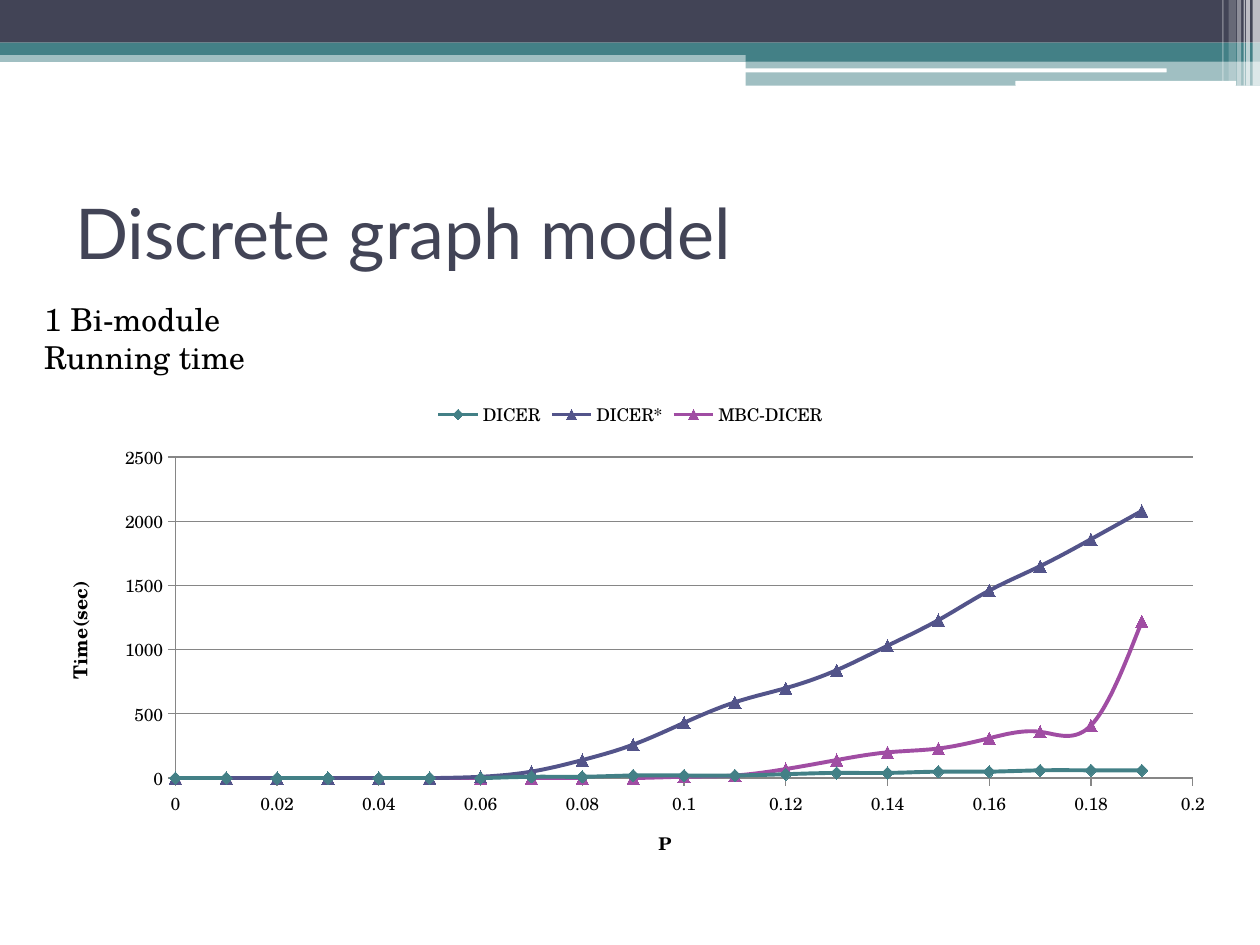
from pptx import Presentation
from pptx.chart.data import XyChartData
from pptx.dml.color import RGBColor
from pptx.enum import chart as charts, shapes, text
from pptx.oxml import parse_xml
from pptx.oxml.ns import nsdecls, qn
from pptx.util import Cm, Pt

COLORS = {"navy": "424456", "teal": "438086", "indigo": "53548A",
          "purple": "A04DA3", "white": "FFFFFF", "black": "000000", "grid": "868686"}
SERIF = "TeX Gyre Schola"

# left, top, width, height in cm, colour, opacity in percent
BANDS = [
    (0, 1.02, 25.4, 0.23, "teal", 50),
    (0, 0, 25.4, 0.86, "navy", 100),
    (0, 0.86, 25.4, 0.25, "teal", 100),
    (15.03, 0.99, 10.37, 0.25, "teal", 100),
    (15.03, 1.23, 10.37, 0.5, "teal", 50),
]
RULES = [(15.01, 1.38, 8.51, 0.08), (20.47, 1.63, 4.45, 0.1)]
# left, width, height in cm, opacity in percent
STRIPES = [
    (25.25, 0.15, 1.73, 65), (25.12, 0.08, 1.73, 65), (25.07, 0.03, 1.73, 60),
    (24.94, 0.08, 1.73, 40), (24.77, 0.15, 1.63, 20), (24.64, 0.03, 1.63, 30),
]

MARKERS = charts.XL_MARKER_STYLE
SERIES = [
    ("DICER", "teal", MARKERS.DIAMOND,
     [0, 0, 0, 0, 0, 0, 0, 10, 10, 20, 20, 20, 30, 40, 40, 50, 50, 60, 60, 60]),
    ("DICER*", "indigo", MARKERS.TRIANGLE,
     [0, 0, 0, 0, 0, 0, 10, 50, 140, 260, 430, 590, 700, 840, 1030, 1230,
      1460, 1650, 1860, 2080]),
    ("MBC-DICER", "purple", MARKERS.TRIANGLE,
     [0, 0, 0, 0, 0, 0, 0, 0, 0, 0, 10, 20, 70, 140, 200, 230, 310, 360, 410, 1220]),
]


def rgb(name):
    return RGBColor.from_string(COLORS[name])


def add_band(page, left, top, width, height, color, opacity=100,
             kind=shapes.MSO_SHAPE.RECTANGLE):
    band = page.shapes.add_shape(kind, Cm(left), Cm(top), Cm(width), Cm(height))
    band.shadow.inherit = False
    band.fill.solid()
    band.fill.fore_color.rgb = rgb(color)
    band.line.fill.background()
    if opacity < 100:
        tint = next(band.element.iter(qn("a:srgbClr")))
        tint.append(parse_xml(f'<a:alpha {nsdecls("a")} val="{opacity * 1000}"/>'))


def add_header(page):
    for band in BANDS:
        add_band(page, *band)
    for rule in RULES:
        add_band(page, *rule, "white", kind=shapes.MSO_SHAPE.ROUNDED_RECTANGLE)
    for left, width, height, opacity in STRIPES:
        add_band(page, left, 0, width, height, "white", opacity)


def style_font(font, size, color="black", name=SERIF, bold=False):
    font.size = Pt(size)
    font.name = name
    font.bold = bold
    font.color.rgb = rgb(color)


def add_text(page, place, lines, size, color, font, anchor):
    box = page.shapes.add_textbox(*map(Cm, place))
    frame = box.text_frame
    frame.word_wrap = True
    frame.vertical_anchor = anchor
    for index, line in enumerate(lines):
        para = frame.add_paragraph() if index else frame.paragraphs[0]
        para.alignment = text.PP_ALIGN.LEFT
        span = para.add_run()
        span.text = line
        style_font(span.font, size, color, font)


def style_axis(axis, title, title_size, maximum, step):
    axis.minimum_scale = 0
    axis.maximum_scale = maximum
    axis.major_unit = step
    axis.major_tick_mark = charts.XL_TICK_MARK.OUTSIDE
    axis.format.line.color.rgb = rgb("grid")
    axis.tick_labels.number_format = "General"
    axis.tick_labels.number_format_is_linked = False
    span = axis.axis_title.text_frame.paragraphs[0].add_run()
    span.text = title
    style_font(span.font, title_size, bold=True)


def style_series(series, color, marker):
    series.format.line.color.rgb = rgb(color)
    series.format.line.width = Pt(2.25)
    series.marker.style = marker
    series.marker.size = 7
    series.marker.format.fill.solid()
    series.marker.format.fill.fore_color.rgb = rgb(color)
    series.marker.format.line.color.rgb = rgb(color)


def set_plot_layout(chart, **fractions):
    """Fix the inner plot area as fractions of the chart."""
    values = "".join(f'<c:{key} val="{value}"/>' for key, value in fractions.items())
    layout = parse_xml(
        f'<c:layout {nsdecls("c")}><c:manualLayout><c:layoutTarget val="inner"/>'
        f'<c:xMode val="edge"/><c:yMode val="edge"/>{values}</c:manualLayout></c:layout>')
    area = next(chart.element.iter(qn("c:plotArea")))
    for old in area.findall(qn("c:layout")):
        area.remove(old)
    area.insert(0, layout)


def add_time_chart(page):
    data = XyChartData()
    for name, _, _, times in SERIES:
        points = data.add_series(name)
        for index, seconds in enumerate(times):
            points.add_data_point(index / 100, seconds)
    chart = page.shapes.add_chart(
        charts.XL_CHART_TYPE.XY_SCATTER_SMOOTH,
        Cm(0.64), Cm(7.82), Cm(24.13), Cm(9.96), data).chart
    style_font(chart.font, 10)
    chart.has_title = False
    chart.has_legend = True
    chart.legend.position = charts.XL_LEGEND_POSITION.TOP
    chart.legend.include_in_layout = False
    plot = chart.plots[0]
    plot.vary_by_categories = False
    for series, (_, color, marker, _) in zip(plot.series, SERIES):
        style_series(series, color, marker)
    for smooth in chart.element.iter(qn("c:smooth")):
        smooth.set("val", "1")
    style_axis(chart.category_axis, "P", 10, 0.2, 0.02)
    style_axis(chart.value_axis, "Time(sec)", 11, 2500, 500)
    chart.category_axis.has_major_gridlines = False
    chart.value_axis.has_major_gridlines = True
    chart.value_axis.major_gridlines.format.line.color.rgb = rgb("grid")
    set_plot_layout(chart, x=0.12, y=0.14, w=0.85, h=0.65)


def main():
    deck = Presentation()
    deck.slide_width, deck.slide_height = Cm(25.4), Cm(19.05)
    page = deck.slides.add_slide(deck.slide_layouts[6])
    add_header(page)
    add_text(page, (1.27, 3.18, 22.86, 2.97), ["Discrete graph model"],
             40, "navy", "Lato", text.MSO_ANCHOR.MIDDLE)
    add_text(page, (0.64, 5.92, 11, 1.8), ["1 Bi-module", "Running time"],
             18, "black", SERIF, text.MSO_ANCHOR.TOP)
    add_time_chart(page)
    deck.save("out.pptx")


if __name__ == "__main__":
    main()
